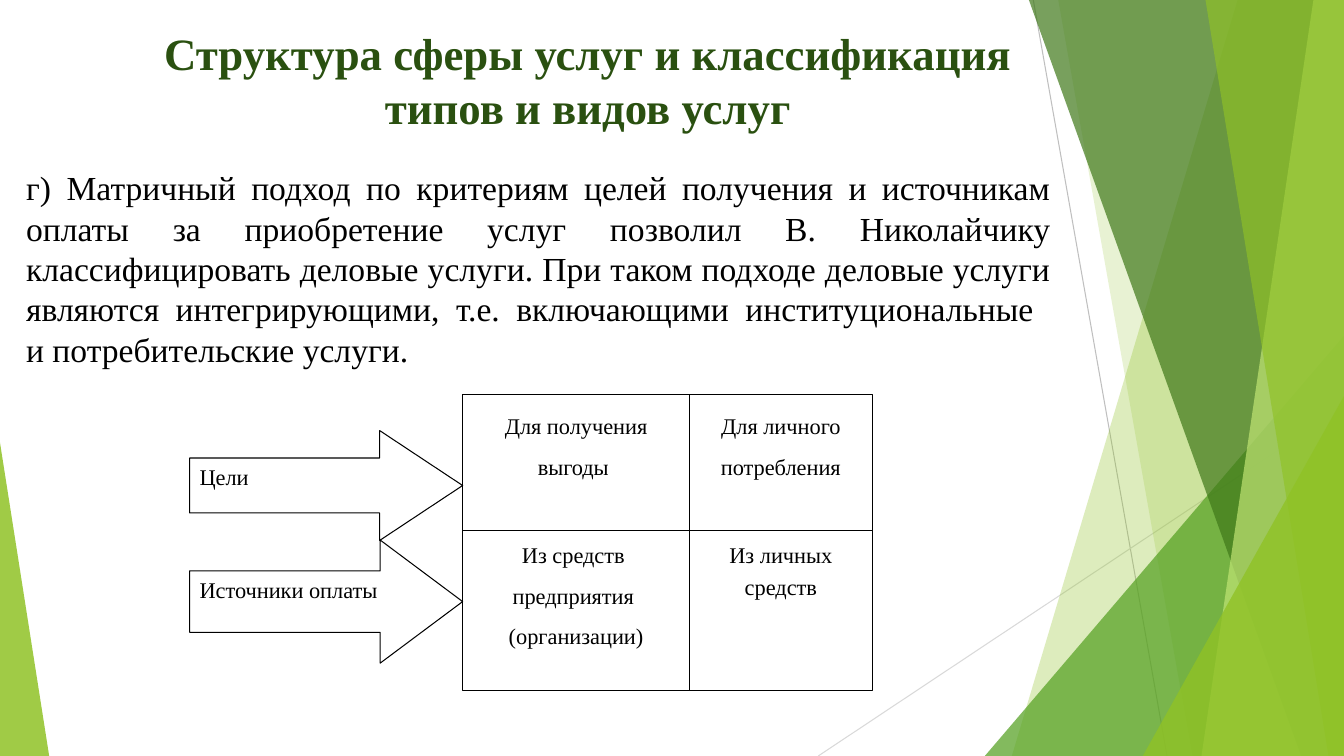
from lxml import etree
from pptx import Presentation
from pptx.dml.color import RGBColor
from pptx.enum import shapes, text
from pptx.oxml.ns import qn
from pptx.util import Cm, Pt

BLACK = RGBColor(0x00, 0x00, 0x00)
WHITE = RGBColor(0xFF, 0xFF, 0xFF)
TITLE_GREEN = RGBColor(0x2A, 0x50, 0x10)
LEAF = RGBColor(0x90, 0xC2, 0x26)
GRASS = RGBColor(0x54, 0xA0, 0x21)
FOREST = RGBColor(0x3F, 0x78, 0x19)
LIME = RGBColor(0xC0, 0xE4, 0x74)
GREY = RGBColor(0xBF, 0xBF, 0xBF)
LIGHT_GREY = RGBColor(0xD9, 0xD9, 0xD9)
WIDTH, HEIGHT = 33.87, 19.05
CENTER, LEFT, JUSTIFY = text.PP_ALIGN.CENTER, text.PP_ALIGN.LEFT, text.PP_ALIGN.JUSTIFY


def paint(shape, color, opacity=100, outline=None):
    shape.shadow.inherit = False
    shape.fill.solid()
    shape.fill.fore_color.rgb = color
    if opacity < 100:
        tint = shape.fill._xPr.find(qn("a:solidFill"))[0]
        etree.SubElement(tint, qn("a:alpha"), val=str(opacity * 1000))
    if outline is None:
        shape.line.fill.background()
    else:
        shape.line.color.rgb = outline
        shape.line.width = Pt(0.75)


def write(shape, lines, size, align, color=BLACK, bold=False, spacing=None, before=0):
    """Fill a shape with one paragraph per line of the list."""
    frame = shape.text_frame
    frame.word_wrap = True
    frame.vertical_anchor = text.MSO_ANCHOR.TOP
    for number, line in enumerate(lines):
        paragraph = frame.add_paragraph() if number else frame.paragraphs[0]
        paragraph.text = line
        paragraph.alignment = align
        paragraph.line_spacing = spacing
        paragraph.space_before = Pt(before)
        for run in paragraph.runs:
            run.font.name = "Times New Roman"
            run.font.size = Pt(size)
            run.font.bold = bold
            run.font.color.rgb = color


deck = Presentation()
deck.slide_width, deck.slide_height = Cm(WIDTH), Cm(HEIGHT)
slide = deck.slides.add_slide(deck.slide_layouts[6])
canvas = slide.shapes

# Thin lines behind the green facets
for x1, y1, x2, color in [(26.04, 0, 29.41, GREY), (WIDTH, 10.24, 20.62, LIGHT_GREY)]:
    ray = canvas.add_connector(shapes.MSO_CONNECTOR.STRAIGHT,
                               Cm(x1), Cm(y1), Cm(x2), Cm(HEIGHT))
    ray.line.color.rgb = color
    ray.line.width = Pt(0.75)
    etree.SubElement(ray._element.spPr, qn("a:effectLst"))

# Facets reach the right edge; those that start below the top are triangles
facets = [
    (31.19, 0, 25.5, LEAF, 30),
    (26.67, 0, 30.05, LEAF, 20),
    (WIDTH, 8.46, 24.82, GRASS, 72),
    (25.93, 0, 32.79, FOREST, 70),
    (33.1, 0, 30.28, LIME, 70),
    (30.38, 0, 33.48, LEAF, 65),
    (WIDTH, 9.98, 28.8, LEAF, 80),
]
for top_x, top, bottom_x, color, opacity in facets:
    if top:
        facet = canvas.add_shape(shapes.MSO_SHAPE.ISOSCELES_TRIANGLE, Cm(bottom_x), Cm(top),
                                 Cm(WIDTH - bottom_x), Cm(HEIGHT - top))
        facet.adjustments[0] = 1
    else:
        outline = canvas.build_freeform(Cm(top_x), 0)
        outline.add_line_segments([(Cm(WIDTH), 0), (Cm(WIDTH), Cm(HEIGHT)),
                                   (Cm(bottom_x), Cm(HEIGHT))])
        facet = outline.convert_to_shape()
    paint(facet, color, opacity)

left_wedge = canvas.add_shape(shapes.MSO_SHAPE.ISOSCELES_TRIANGLE,
                              0, Cm(11.15), Cm(1.24), Cm(7.9))
left_wedge.adjustments[0] = 0
paint(left_wedge, LEAF, 85)

title = canvas.add_textbox(Cm(3.78), Cm(0.53), Cm(22.07), Cm(3))
write(title, ["Структура сферы услуг и классификация типов и видов услуг"],
      32, CENTER, TITLE_GREEN, bold=True)

approach = canvas.add_textbox(Cm(0.41), Cm(4.09), Cm(26.31), Cm(5.38))
write(approach, [
    "г) Матричный подход по критериям целей получения и источникам оплаты за "
    "приобретение услуг позволил В. Николайчику классифицировать деловые услуги. "
    "При таком подходе деловые услуги являются интегрирующими, т.е. включающими "
    "институциональные \nи потребительские услуги."], 24, JUSTIFY)

# Matrix of goals and payment sources: lines, line spacing, space before
columns = [(11.66, 5.72), (17.38, 4.6)]
rows = [(9.93, 3.45), (13.38, 4.01)]
matrix = [
    [(["Для получения выгоды "], 1.5, 6), (["Для личного потребления"], 1.5, 6)],
    [(["Из средств ", "предприятия ", "(организации)"], 1.2, 6),
     (["Из личных средств"], 1.2, 12)],
]
for (top, height), cells in zip(rows, matrix):
    for (left, width), (lines, spacing, before) in zip(columns, cells):
        cell = canvas.add_shape(shapes.MSO_SHAPE.RECTANGLE,
                                Cm(left), Cm(top), Cm(width), Cm(height))
        paint(cell, WHITE, outline=BLACK)
        write(cell, lines, 16, CENTER, spacing=spacing, before=before)

criteria = [("Цели", 10.85, 2.77, 0.755, 0), ("Источники оплаты", 13.61, 3.1, 0.67, 6)]
for criterion, top, height, head, before in criteria:
    arrow = canvas.add_shape(shapes.MSO_SHAPE.RIGHT_ARROW,
                             Cm(4.78), Cm(top), Cm(6.88), Cm(height))
    arrow.adjustments[1] = head
    paint(arrow, WHITE, outline=BLACK)
    write(arrow, [criterion], 16, LEFT, before=before)

deck.save("out.pptx")
